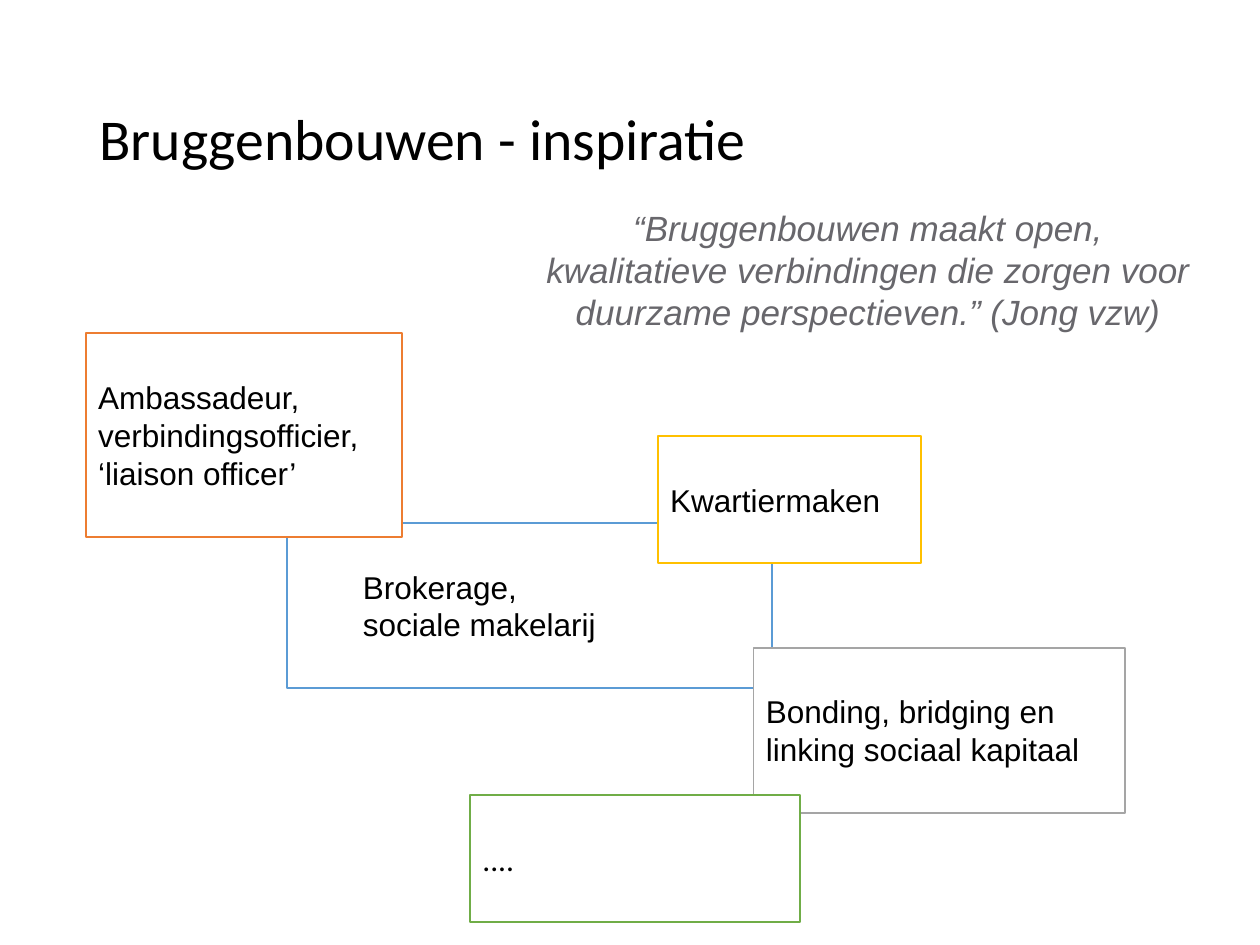
from pptx import Presentation
from pptx.dml.color import RGBColor
from pptx.enum.shapes import MSO_SHAPE
from pptx.enum.text import MSO_ANCHOR, PP_ALIGN
from pptx.util import Inches, Pt

COLORS = {
    "white": "FFFFFF",
    "black": "000000",
    "quote": "68676C",
    "blue": "5B9BD5",
    "orange": "ED7D31",
    "gold": "FFC000",
    "gray": "A5A5A5",
    "green": "70AD47",
}


def color(name):
    return RGBColor.from_string(COLORS[name])


def write(frame, lines, ink, paragraph_format, font_format):
    frame.word_wrap = True
    for number, line in enumerate(lines):
        paragraph = frame.paragraphs[0] if number == 0 else frame.add_paragraph()
        for key, value in paragraph_format.items():
            setattr(paragraph, key, value)
        run = paragraph.add_run()
        run.text = line
        for key, value in font_format.items():
            setattr(run.font, key, value)
        run.font.color.rgb = color(ink)


presentation = Presentation()
presentation.slide_width = Inches(10)
presentation.slide_height = Inches(7.5)
slide = presentation.slides.add_slide(presentation.slide_layouts[6])

title = slide.shapes.add_textbox(Inches(0.69), Inches(0.4), Inches(8.62), Inches(1.45))
title.text_frame.vertical_anchor = MSO_ANCHOR.MIDDLE
write(title.text_frame, ["Bruggenbouwen - inspiratie"], "black",
      {"line_spacing": 0.9}, {"name": "Calibri", "size": Pt(33)})

concepts = [
    (2.28, 4.15, 3.85, 1.31, "blue", 0.6, "Arial", ["Brokerage,", "sociale makelarij"]),
    (0.68, 2.64, 2.51, 1.62, "orange", 0.1, "Arial",
     ["Ambassadeur,", "verbindingsofficier,", "‘liaison officer’"]),
    (5.22, 3.46, 2.09, 1.01, "gold", 0.1, "Arial", ["Kwartiermaken"]),
    (5.98, 5.14, 2.95, 1.31, "gray", 0.1, "Arial",
     ["Bonding, bridging en linking sociaal kapitaal"]),
    (3.73, 6.31, 2.62, 1.01, "green", 0.1, "Calibri", ["...."]),
]
for left, top, width, height, outline, inset, font, lines in concepts:
    concept = slide.shapes.add_shape(
        MSO_SHAPE.RECTANGLE, Inches(left), Inches(top), Inches(width), Inches(height))
    concept.shadow.inherit = False
    concept.fill.solid()
    concept.fill.fore_color.rgb = color("white")
    concept.line.color.rgb = color(outline)
    concept.line.width = Pt(1)
    concept.text_frame.margin_left = Inches(inset)
    concept.text_frame.vertical_anchor = MSO_ANCHOR.MIDDLE
    write(concept.text_frame, lines, "black",
          {"alignment": PP_ALIGN.LEFT}, {"name": font, "size": Pt(18)})

quote = slide.shapes.add_textbox(Inches(4.21), Inches(1.59), Inches(5.36), Inches(1.11))
write(quote.text_frame,
      ["“Bruggenbouwen maakt open, kwalitatieve verbindingen die zorgen voor "
       "duurzame perspectieven.” (Jong vzw)"],
      "quote", {"alignment": PP_ALIGN.CENTER},
      {"name": "Arial", "size": Pt(20), "italic": True})

presentation.save("out.pptx")
